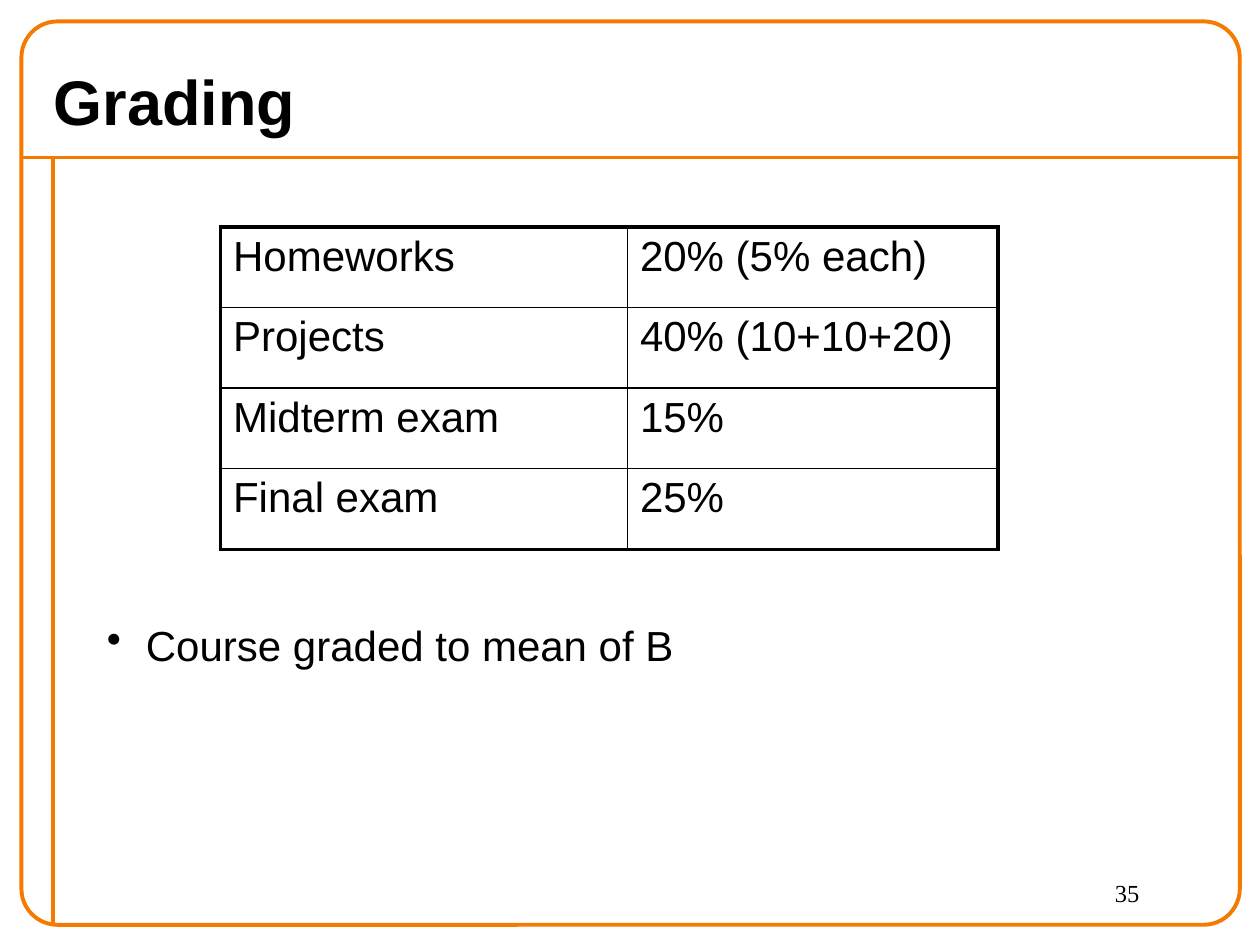
from dataclasses import dataclass

from pptx import Presentation
from pptx.dml.color import RGBColor
from pptx.enum.shapes import MSO_CONNECTOR, MSO_SHAPE
from pptx.enum.text import MSO_ANCHOR
from pptx.oxml.ns import qn
from pptx.util import Inches, Pt
from lxml import etree

STRAIGHT = MSO_CONNECTOR.STRAIGHT
ROUNDED_RECTANGLE = MSO_SHAPE.ROUNDED_RECTANGLE
TOP = MSO_ANCHOR.TOP
MIDDLE = MSO_ANCHOR.MIDDLE

COLORS = {"frame": "F47A00", "text": "000000", "border": "000000"}
FRAME_WIDTH = Pt(2.25)
OUTER_BORDER = Pt(2.25)
INNER_BORDER = Pt(1)

GRADES = [
    ("Homeworks", "20% (5% each)"),
    ("Projects", "40% (10+10+20)"),
    ("Midterm exam", "15%"),
    ("Final exam", "25%"),
]
COLUMN_WIDTHS = [3.23, 2.94]
ROW_HEIGHT = 0.64


@dataclass
class Rule:
    start: tuple[float, float]
    end: tuple[float, float]


@dataclass
class Label:
    text: str
    box: tuple[float, float, float, float]
    size: int
    font: str = "Arial"
    bold: bool = False
    anchor: MSO_ANCHOR = TOP


RULES = [Rule((0.17, 1.25), (9.83, 1.25)), Rule((0.42, 1.25), (0.42, 7.33))]
PAGE_NUMBER = Label("35", (8.75, 6.92, 1, 0.42), 14, font="Times New Roman")
TITLE = Label("Grading", (0.33, 0.42, 9.5, 0.75), 36, bold=True, anchor=MIDDLE)
NOTE = Label("Course graded to mean of B", (0.75, 4.91, 8.57, 2.26), 24)


def style_frame_line(line) -> None:
    line.color.rgb = RGBColor.from_string(COLORS["frame"])
    line.width = FRAME_WIDTH


def style_font(paragraph, size: int, name: str = "Arial", bold: bool = False) -> None:
    font = paragraph.font
    font.size = Pt(size)
    font.name = name
    font.bold = bold
    font.color.rgb = RGBColor.from_string(COLORS["text"])


def add_rule(slide, rule: Rule) -> None:
    points = [Inches(value) for value in rule.start + rule.end]
    connector = slide.shapes.add_connector(STRAIGHT, *points)
    style_frame_line(connector.line)
    etree.SubElement(connector.line._get_or_add_ln().getparent(), qn("a:effectLst"))


def add_frame(slide) -> None:
    box = [Inches(value) for value in (0.17, 0.17, 9.67, 7.17)]
    shape = slide.shapes.add_shape(ROUNDED_RECTANGLE, *box)
    shape.adjustments[0] = 0.04
    shape.shadow.inherit = False
    shape.fill.background()
    style_frame_line(shape.line)


def add_label(slide, label: Label):
    shape = slide.shapes.add_textbox(*[Inches(value) for value in label.box])
    text_frame = shape.text_frame
    text_frame.word_wrap = True
    text_frame.vertical_anchor = label.anchor
    paragraph = text_frame.paragraphs[0]
    paragraph.text = label.text
    style_font(paragraph, label.size, label.font, label.bold)
    return paragraph


def add_bullet(paragraph) -> None:
    paragraph.line_spacing = 0.9
    properties = paragraph._p.get_or_add_pPr()
    indent = Inches(0.31)
    properties.set("marL", str(indent))
    properties.set("indent", str(-indent))
    bullet = etree.Element(qn("a:buChar"), char="•")
    properties.find(qn("a:lnSpc")).addnext(bullet)


def set_border(cell, side: str, width: Pt) -> None:
    properties = cell._tc.get_or_add_tcPr()
    line = etree.SubElement(properties, qn(f"a:ln{side}"), w=str(width))
    fill = etree.SubElement(line, qn("a:solidFill"))
    etree.SubElement(fill, qn("a:srgbClr"), val=COLORS["border"])


def add_grade_table(slide) -> None:
    row_count, column_count = len(GRADES), len(COLUMN_WIDTHS)
    graphic_frame = slide.shapes.add_table(
        row_count, column_count, Inches(1.75), Inches(1.8),
        Inches(sum(COLUMN_WIDTHS)), Inches(ROW_HEIGHT * row_count),
    )
    table = graphic_frame.table
    table.first_row = False
    table.horz_banding = False
    for column, width in zip(table.columns, COLUMN_WIDTHS):
        column.width = Inches(width)
    for row_index, grade in enumerate(GRADES):
        table.rows[row_index].height = Inches(ROW_HEIGHT)
        for column_index, text in enumerate(grade):
            cell = table.cell(row_index, column_index)
            outer_sides = {
                "L": column_index == 0,
                "R": column_index == column_count - 1,
                "T": row_index == 0,
                "B": row_index == row_count - 1,
            }
            for side, is_outer in outer_sides.items():
                set_border(cell, side, OUTER_BORDER if is_outer else INNER_BORDER)
            cell.fill.background()
            paragraph = cell.text_frame.paragraphs[0]
            paragraph.text = text
            style_font(paragraph, 24)


def main() -> None:
    presentation = Presentation()
    presentation.slide_width = Inches(10)
    presentation.slide_height = Inches(7.5)
    slide = presentation.slides.add_slide(presentation.slide_layouts[6])
    for rule in RULES:
        add_rule(slide, rule)
    add_frame(slide)
    add_label(slide, PAGE_NUMBER)
    add_label(slide, TITLE)
    add_bullet(add_label(slide, NOTE))
    add_grade_table(slide)
    presentation.save("out.pptx")


if __name__ == "__main__":
    main()
